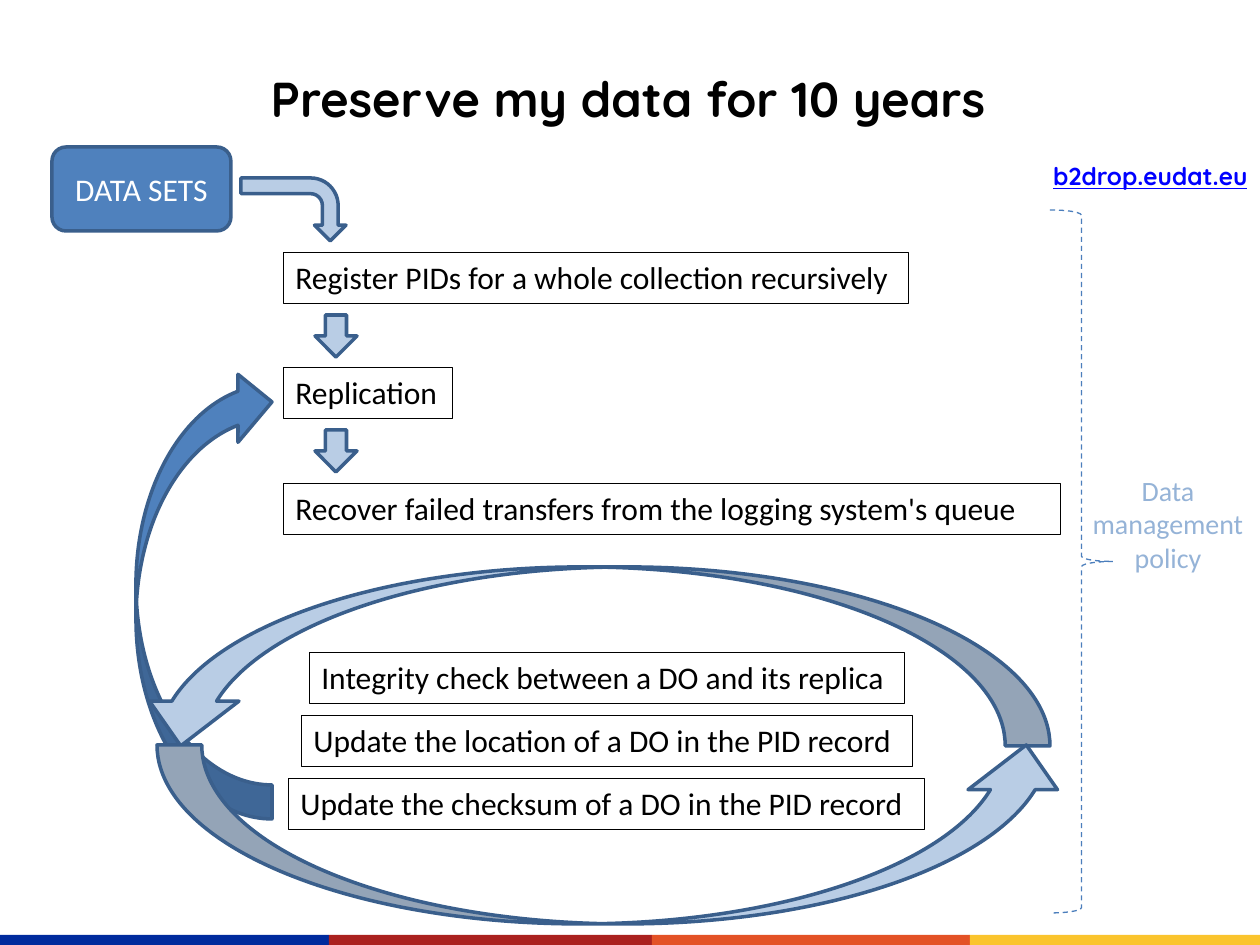
import pptx
import pptx.util
import pptx.dml.color
import pptx.enum.dml
import pptx.enum.shapes
import pptx.enum.text

SCALE = 914400 / 126
COLORS = {
    "black": "000000", "white": "FFFFFF", "link": "0000FF",
    "blue": "4F81BD", "pale": "B9CDE5", "outline": "3A5F8C",
    "brace": "4B7EBC", "policy": "95B3D7",
}
FOOTER_COLORS = ["002B9D", "AA211F", "E35226", "FAC42D"]
FOOTER_EDGES = [0, 329, 652, 970, 1260]
STEPS = [
    ("Register PIDs for a whole collection recursively", 283, 252, 625),
    ("Replication", 283, 367, 169),
    ("Recover failed transfers from the logging system's queue", 283, 483, 777),
    ("Integrity check between a DO and its replica", 309, 652, 595),
    ("Update the location of a DO in the PID record", 301, 715, 611),
    ("Update the checksum of a DO in the PID record", 288, 778, 636),
]
SHAPE = pptx.enum.shapes.MSO_SHAPE
ALIGN = pptx.enum.text.PP_ALIGN
ANCHOR = pptx.enum.text.MSO_ANCHOR


def px(value):
    return pptx.util.Emu(round(value * SCALE))


def color(value):
    return pptx.dml.color.RGBColor.from_string(value)


def set_line(shape, value, width):
    shape.line.color.rgb = color(value)
    shape.line.width = pptx.util.Pt(width)


def add_shape(slide, kind, area, fill=None, line=COLORS["outline"], width=2, flips=()):
    shape = slide.shapes.add_shape(kind, *map(px, area))
    shape.shadow.inherit = False
    if fill:
        shape.fill.solid()
        shape.fill.fore_color.rgb = color(fill)
    else:
        shape.fill.background()
    if line:
        set_line(shape, line, width)
    else:
        shape.line.fill.background()
    for flip in flips:
        shape._element.spPr.xfrm.set(flip, "1")
    return shape


def write(shape, lines, size, ink, font="Calibri", align=ALIGN.LEFT,
          anchor=ANCHOR.TOP, bold=False, underline=False):
    frame = shape.text_frame
    frame.word_wrap = True
    frame.vertical_anchor = anchor
    for index, line in enumerate(lines):
        para = frame.add_paragraph() if index else frame.paragraphs[0]
        para.alignment = align
        span = para.add_run()
        span.text = line
        span.font.name = font
        span.font.size = pptx.util.Pt(size)
        span.font.bold = bold
        span.font.underline = underline
        span.font.color.rgb = color(COLORS[ink])


def add_text(slide, area, lines, size, ink, **style):
    box = slide.shapes.add_textbox(*map(px, area))
    write(box, lines, size, ink, **style)
    return box


def add_footer(slide):
    for left, right, fill in zip(FOOTER_EDGES, FOOTER_EDGES[1:], FOOTER_COLORS):
        add_shape(slide, SHAPE.RECTANGLE, (left, 935, right - left, 11), fill, line=None)


def add_cycle(slide):
    add_shape(slide, SHAPE.CURVED_RIGHT_ARROW, (136, 368, 136, 451),
              COLORS["blue"], flips=["flipV"])
    add_shape(slide, SHAPE.CURVED_UP_ARROW, (136, 567, 914, 179),
              COLORS["pale"], flips=["flipH", "flipV"])
    add_shape(slide, SHAPE.CURVED_UP_ARROW, (157, 745, 914, 179), COLORS["pale"])


def add_steps(slide):
    for label, left, top, width in STEPS:
        box = add_text(slide, (left, top, width, 51), [label], 18, "black")
        set_line(box, COLORS["black"], 0.25)


def add_flow(slide):
    source = add_shape(slide, SHAPE.ROUNDED_RECTANGLE, (52, 147, 179, 84), COLORS["blue"])
    write(source, ["DATA SETS"], 18, "white", align=ALIGN.CENTER, anchor=ANCHOR.MIDDLE)
    bend = add_shape(slide, SHAPE.BENT_ARROW, (262, 157, 63, 105), COLORS["pale"])
    bend.rotation = 90
    for top in (315, 430):
        add_shape(slide, SHAPE.DOWN_ARROW, (315, top, 42, 42), COLORS["pale"])


def add_policy(slide):
    brace = add_shape(slide, SHAPE.RIGHT_BRACE, (1050, 210, 63, 703),
                      line=COLORS["brace"], width=0.75)
    brace.line.dash_style = pptx.enum.dml.MSO_LINE.DASH
    add_text(slide, (1076, 467, 184, 115), ["Data management", "policy"],
             16, "policy", align=ALIGN.CENTER)


def main():
    deck = pptx.Presentation()
    deck.slide_width, deck.slide_height = px(1260), px(945)
    slide = deck.slides.add_slide(deck.slide_layouts[6])
    add_footer(slide)
    add_text(slide, (1017, 155, 243, 72), ["b2drop.eudat.eu"], 14, "link",
             font="Quicksand", align=ALIGN.RIGHT, bold=True, underline=True)
    add_cycle(slide)
    add_text(slide, (179, 38, 898, 120), ["Preserve my data for 10 years"], 28, "black",
             font="Quicksand", align=ALIGN.CENTER, anchor=ANCHOR.MIDDLE, bold=True)
    add_steps(slide)
    add_flow(slide)
    add_policy(slide)
    deck.save("out.pptx")


if __name__ == "__main__":
    main()
